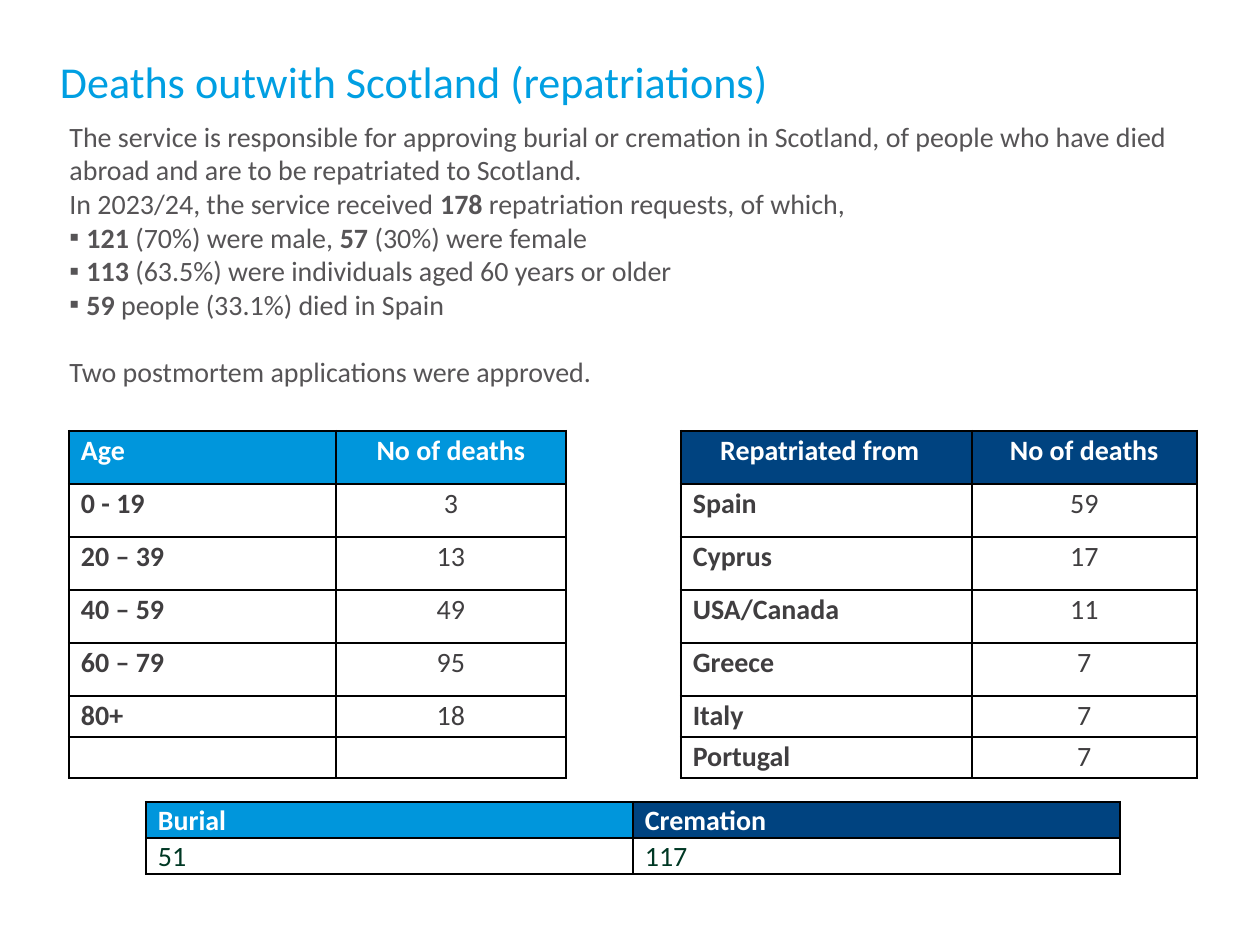
from lxml.etree import SubElement
from pptx import Presentation
from pptx.dml.color import RGBColor
from pptx.enum.text import MSO_ANCHOR as Anchor, PP_ALIGN as Align
from pptx.oxml import parse_xml
from pptx.oxml.ns import nsdecls, qn
from pptx.util import Emu, Pt

TITLE_BLUE = RGBColor(0x00, 0x9F, 0xE2)
BLUE = RGBColor(0x00, 0x96, 0xDC)
NAVY = RGBColor(0x00, 0x43, 0x80)
WHITE = RGBColor(0xFF, 0xFF, 0xFF)
BODY_GREY = RGBColor(0x56, 0x54, 0x56)
TABLE_GREY = RGBColor(0x40, 0x3E, 0x40)
GREEN = RGBColor(0x00, 0x38, 0x24)
BLACK = RGBColor(0x00, 0x00, 0x00)

TITLE = "Deaths outwith Scotland (repatriations)"
INTRO = [
    ["The service is responsible for approving burial or cremation in Scotland, "
     "of people who have died abroad and are to be repatriated to Scotland."],
    ["In 2023/24, the service received ", "178 ", "repatriation requests, of which,"],
]
FINDINGS = [
    ["", "121 ", "(70%) were male, ", "57 ", "(30%) were female"],
    ["", "113 ", "(63.5%) were individuals aged 60 years or older"],
    ["", "59 ", "people (33.1%) died in Spain"],
]
CLOSING = ["Two postmortem applications were approved."]
DEATHS = [
    ["Age", "No of deaths", None, "Repatriated from", "No of deaths"],
    ["0 - 19", "3", None, "Spain", "59"],
    ["20 – 39", "13", None, "Cyprus", "17"],
    ["40 – 59", "49", None, "USA/Canada", "11"],
    ["60 – 79", "95", None, "Greece", "7"],
    ["80+", "18", None, "Italy", "7"],
    ["", "", None, "Portugal", "7"],
]
OUTCOMES = [["Burial", "Cremation"], ["51", "117"]]
GAP_COLUMN = 2


def px(length):
    return Emu(round(length * 914400 / 168))


class SlideBuilder:
    """Holds the text style and the current slide, and adds elements to it."""

    font = "Calibri"
    size = 12

    def __init__(self, presentation):
        self.slide = presentation.slides.add_slide(presentation.slide_layouts[6])

    def style(self, run, color, bold=False, size=None):
        run.font.name = self.font
        run.font.size = Pt(size or self.size)
        run.font.bold = bold
        run.font.color.rgb = color

    def text_box(self, left, top, width, height):
        shape = self.slide.shapes.add_textbox(px(left), px(top), px(width), px(height))
        shape.text_frame.word_wrap = True
        return shape.text_frame

    def title(self, text, left, top, width, height):
        frame = self.text_box(left, top, width, height)
        frame.margin_left = frame.margin_right = frame.margin_top = frame.margin_bottom = 0
        frame.vertical_anchor = Anchor.MIDDLE
        frame.text = text
        self.style(frame.paragraphs[0].runs[0], TITLE_BLUE, size=18.9)

    def body(self, left, top, width, height):
        frame = self.text_box(left, top, width, height)
        for index, segments in enumerate([*INTRO, *FINDINGS, CLOSING]):
            paragraph = frame.add_paragraph() if index else frame.paragraphs[0]
            for position, text in enumerate(segments):
                if text:
                    run = paragraph.add_run()
                    run.text = text
                    self.style(run, BODY_GREY, bold=position % 2 == 1)
            if segments in FINDINGS:
                self.bullet(paragraph)
        paragraph.space_before = Pt(14.4)

    def bullet(self, paragraph):
        properties = paragraph._p.get_or_add_pPr()
        properties.set("marL", str(px(17)))
        properties.set("indent", str(-px(17)))
        SubElement(properties, qn("a:buFont"), typeface="Arial")
        SubElement(properties, qn("a:buChar"), char="▪")

    def table(self, left, top, widths, heights):
        frame = self.slide.shapes.add_table(len(heights), len(widths), px(left), px(top),
                                            px(sum(widths)), px(sum(heights)))
        table = frame.table
        table.first_row = table.horz_banding = False
        for column, width in zip(table.columns, widths):
            column.width = px(width)
        for row, height in zip(table.rows, heights):
            row.height = px(height)
        return table

    def cell(self, cell, text, color, bold, align=Align.LEFT, fill=None, spacing=1.1):
        cell.margin_left = cell.margin_right = px(12)
        cell.margin_top = cell.margin_bottom = 0
        cell.text_frame.text = text
        paragraph = cell.text_frame.paragraphs[0]
        paragraph.alignment = align
        paragraph.line_spacing = spacing
        paragraph.space_after = Pt(8)
        for run in paragraph.runs:
            self.style(run, color, bold)
        SubElement(paragraph._p, qn("a:endParaRPr"), sz=str(self.size * 100))
        if fill:
            cell.fill.solid()
            cell.fill.fore_color.rgb = fill
        else:
            cell.fill.background()

    def borders(self, cell, sides="LRTB"):
        properties = cell._tc.get_or_add_tcPr()
        for index, side in enumerate("LRTB"):
            paint = f'<a:solidFill><a:srgbClr val="{BLACK}"/></a:solidFill>'
            if side not in sides:
                paint = "<a:noFill/>"
            line = f'<a:ln{side} {nsdecls("a")} w="{Pt(1)}">{paint}</a:ln{side}>'
            properties.insert(index, parse_xml(line))

    def deaths_table(self, left, top):
        table = self.table(left, top, [267, 230, 115, 291, 225], [53] * 5 + [41] * 2)
        for row, values in enumerate(DEATHS):
            for column, text in enumerate(values):
                cell = table.cell(row, column)
                if column == GAP_COLUMN:
                    self.cell(cell, "", TABLE_GREY, False)
                    self.borders(cell, "LR")
                    continue
                header = row == 0
                label = column in (0, 3)
                centred = not label or (header and column == 3)
                fill = BLUE if column < GAP_COLUMN else NAVY
                self.cell(cell, text, WHITE if header else TABLE_GREY, header or label,
                          Align.CENTER if centred else Align.LEFT, fill if header else None)
                self.borders(cell)
        table.cell(0, 3).margin_right = px(25)
        table.cell(0, GAP_COLUMN).merge(table.cell(len(DEATHS) - 1, GAP_COLUMN))

    def outcomes_table(self, left, top):
        table = self.table(left, top, [487] * 2, [36] * 2)
        for row, values in enumerate(OUTCOMES):
            for column, text in enumerate(values):
                header = row == 0
                cell = table.cell(row, column)
                self.cell(cell, text, WHITE if header else GREEN, header,
                          fill=(BLUE, NAVY)[column] if header else None, spacing=1.07)
                self.borders(cell)


def main():
    presentation = Presentation()
    presentation.slide_width = px(1260)
    presentation.slide_height = px(945)
    builder = SlideBuilder(presentation)
    builder.title(TITLE, 60, 51, 1146, 59)
    builder.body(53, 111, 1160, 289)
    builder.deaths_table(69, 431)
    builder.outcomes_table(146, 802)
    presentation.save("out.pptx")


if __name__ == "__main__":
    main()
